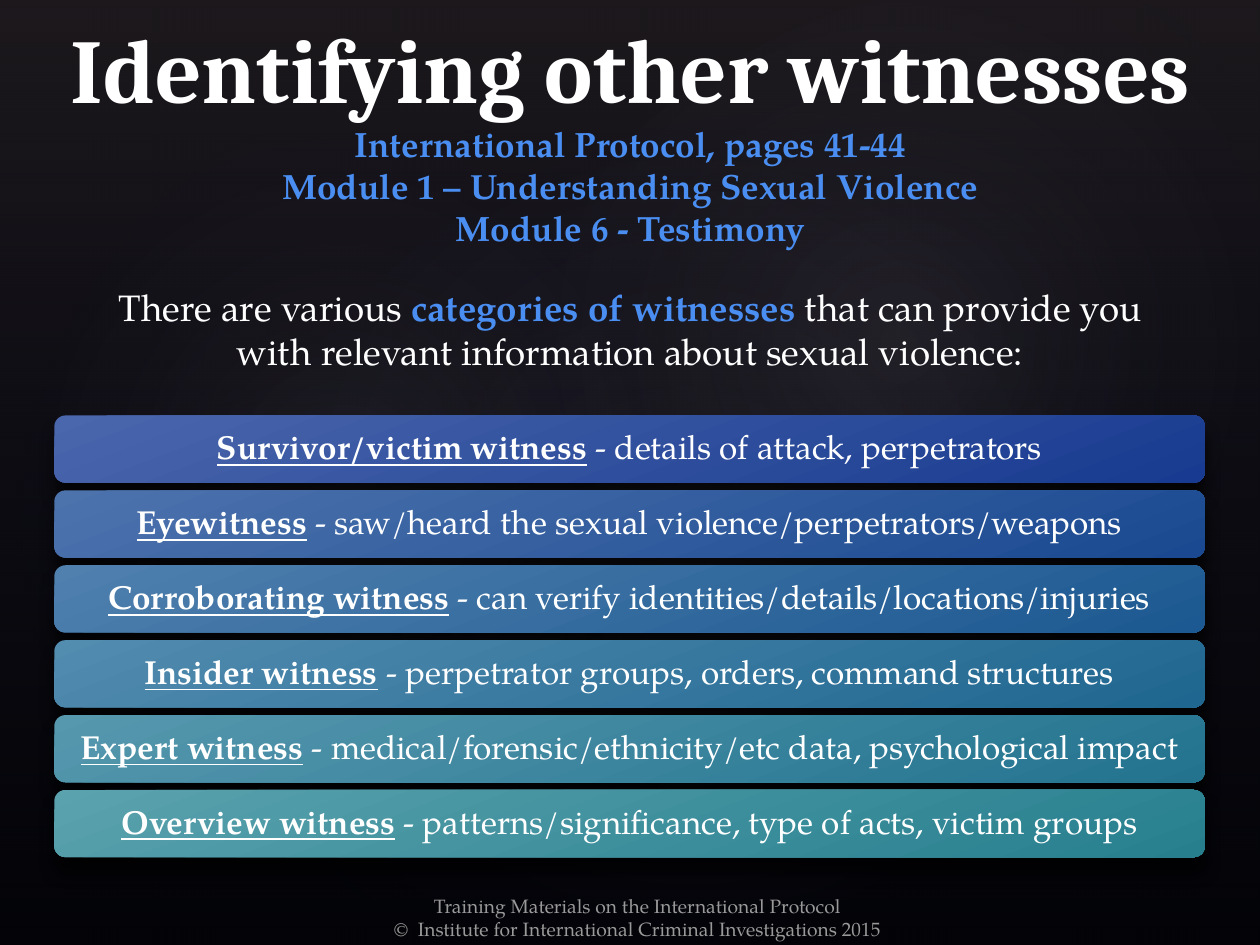
from pptx import Presentation
from pptx import util as u
from pptx.dml import color as c
from pptx.enum import shapes as s, text as t
from pptx.oxml import parse_xml, ns

WHITE, BLUE, GREY = "FFFFFF", "4A8EF2", "999999"
SERIF, HEAD = "TeX Gyre Pagella", "Cambria"
CIRCLE = ('<a:path path="circle"><a:fillToRect l="50000" t="50000" '
          'r="50000" b="50000"/></a:path>')


def rgb(code):
    return c.RGBColor.from_string(code)


def linear(angle):
    return f'<a:lin ang="{angle * 60000}" scaled="0"/>'


def tint(code, alpha):
    return f'<a:srgbClr val="{code}"><a:alpha val="{alpha * 1000}"/></a:srgbClr>'


def blend(stops, shade):
    marks = "".join(f'<a:gs pos="{pos * 1000}">{tint(code, alpha)}</a:gs>'
                    for pos, code, alpha in stops)
    return parse_xml(f'<a:gradFill {ns.nsdecls("a")} rotWithShape="1">'
                     f'<a:gsLst>{marks}</a:gsLst>{shade}</a:gradFill>')


class Deck:
    def __init__(self):
        self.prs = Presentation()
        self.prs.slide_width, self.prs.slide_height = u.Pt(720), u.Pt(540)
        self.slide = self.prs.slides.add_slide(self.prs.slide_layouts[5])
        fill = self.slide.background.fill
        fill.solid()
        fill.fore_color.rgb = rgb("000000")

    def shape(self, kind, box, stops, shade, turn=0):
        item = self.slide.shapes.add_shape(kind, *map(u.Pt, box))
        item.rotation = turn
        item.shadow.inherit = False
        item.line.fill.background()
        item._element.spPr.insert(2, blend(stops, shade))
        return item

    def glow(self, box, turn, alpha):
        stops = [(0, "C4BCC6", alpha), (58, "242852", 0)]
        self.shape(s.MSO_SHAPE.OVAL, box, stops, CIRCLE, turn)

    def style(self, para, size, code, bold=None):
        para.alignment = t.PP_ALIGN.CENTER
        font = para.font
        font.name, font.size, font.bold = SERIF, u.Pt(size), bold
        font.color.rgb = rgb(code)

    def title(self, head, lines, box):
        item = self.slide.shapes.title
        self.slide.shapes._spTree.append(item._element)
        item.left, item.top, item.width, item.height = map(u.Pt, box)
        frame = item.text_frame
        frame.auto_size = t.MSO_AUTO_SIZE.NONE
        frame.vertical_anchor = t.MSO_ANCHOR.BOTTOM
        para = frame.paragraphs[0]
        self.style(para, 20, BLUE, True)
        run = para.add_run()
        run.text = head
        run.font.name, run.font.size = HEAD, u.Pt(52)
        run.font.color.rgb = rgb(WHITE)
        for line in lines[:-1]:
            para.add_line_break()
            para.add_run().text = line
        last = frame.add_paragraph()
        last.text = lines[-1]
        self.style(last, 20, BLUE, True)

    def text(self, box, paras, size, code, anchor):
        item = self.slide.shapes.add_textbox(*map(u.Pt, box))
        frame = item.text_frame
        frame.word_wrap = True
        frame.vertical_anchor = anchor
        for i, runs in enumerate(paras):
            para = frame.add_paragraph() if i else frame.paragraphs[0]
            self.style(para, size, code)
            for words, strong in runs:
                run = para.add_run()
                run.text = words
                if strong:
                    run.font.bold = True
                    run.font.color.rgb = rgb(BLUE)

    def bar(self, box, name, note, light, dark):
        stops = [(0, light, 100), (100, dark, 100)]
        item = self.shape(s.MSO_SHAPE.ROUNDED_RECTANGLE, box, stops, linear(69))
        effect = item._element.spPr.find(ns.qn("a:effectLst"))
        effect.append(parse_xml(
            f'<a:outerShdw {ns.nsdecls("a")} blurRad="{u.Pt(9)}" dist="{u.Pt(9)}" '
            f'dir="5400000" rotWithShape="0">{tint("000000", 70)}</a:outerShdw>'))
        frame = item.text_frame
        frame.word_wrap = True
        frame.vertical_anchor = t.MSO_ANCHOR.MIDDLE
        frame.margin_left = frame.margin_right = u.Pt(5.7)
        frame.margin_top = frame.margin_bottom = u.Pt(5.7)
        para = frame.paragraphs[0]
        para.line_spacing = 0.9
        self.style(para, 19, WHITE)
        run = para.add_run()
        run.text = name
        run.font.bold = run.font.underline = True
        para.add_run().text = f" - {note}"


ROWS = [
    ("Survivor/victim witness", "details of attack, perpetrators",
     "4A66AC", "183A90"),
    ("Eyewitness", "saw/heard the sexual violence/perpetrators/weapons",
     "4D73AD", "1A4991"),
    ("Corroborating witness", "can verify identities/details/locations/injuries",
     "4F80AE", "1C5891"),
    ("Insider witness", "perpetrator groups, orders, command structures",
     "528CAF", "1F6690"),
    ("Expert witness", "medical/forensic/ethnicity/etc data, psychological impact",
     "5698AE", "23738F"),
    ("Overview witness", "patterns/significance, type of acts, victim groups",
     "5AA2AE", "277F8E"),
]


def main():
    deck = Deck()
    deck.shape(s.MSO_SHAPE.RECTANGLE, (0, 0, 720, 540),
               [(0, "504652", 36), (100, "242852", 10)], linear(90))
    deck.glow((108, 82, 570, 449), 328.7, 7)
    deck.glow((-21.6, 92, 436, 353), 294.3, 8)
    deck.glow((258, 9.4, 510, 374), 328.7, 8)
    deck.text((42.5, 145.5, 635, 85),
              [[("There are various ", False), ("categories of witnesses", True),
                (" that can provide you with relevant information "
                 "about sexual violence:", False)]],
              21, WHITE, t.MSO_ANCHOR.MIDDLE)
    deck.text((184.3, 507.6, 360, 28.8),
              [[("Training Materials on the International Protocol", False)],
               [("©  Institute for International Criminal Investigations 2015",
                 False)]],
              11, GREY, t.MSO_ANCHOR.TOP)
    deck.title("Identifying other witnesses",
               ["International Protocol, pages 41-44",
                "Module 1 – Understanding Sexual Violence",
                "Module 6 - Testimony"],
               (14.4, 9.4, 692, 136))
    for i, row in enumerate(ROWS):
        deck.bar((31, 237.4 + i * 42.8, 657.5, 38.4), *row)
    deck.prs.save("out.pptx")


if __name__ == "__main__":
    main()
